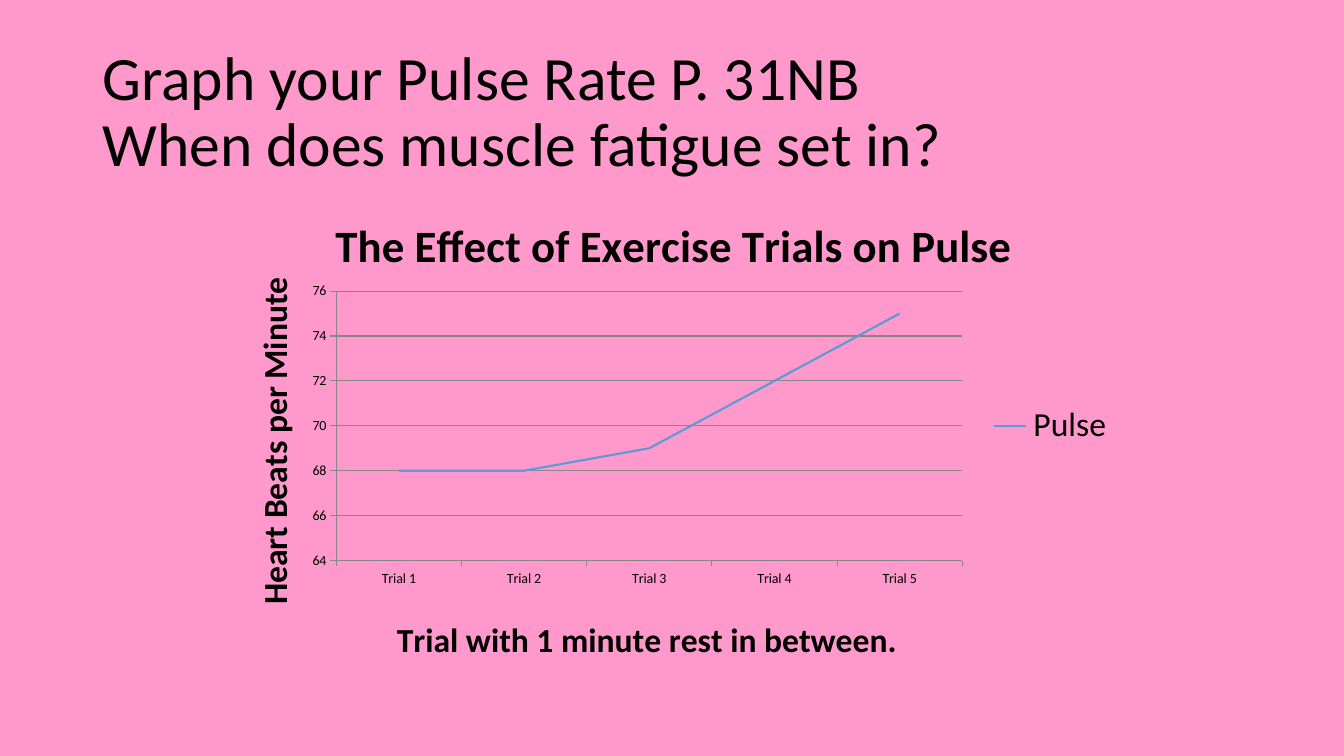
from lxml import etree
from pptx import Presentation
from pptx.chart.data import CategoryChartData as Data
from pptx.dml.color import RGBColor
from pptx.enum.chart import XL_CHART_TYPE as Kind, XL_LEGEND_POSITION as Side
from pptx.enum.chart import XL_MARKER_STYLE as Mark, XL_TICK_MARK as Tick
from pptx.enum.text import MSO_ANCHOR as Anchor, MSO_AUTO_SIZE as Fit, PP_ALIGN as Align
from pptx.oxml.ns import qn
from pptx.util import Pt

PINK = RGBColor(0xFF, 0x99, 0xCC)
BLACK = RGBColor(0, 0, 0)
BLUE = RGBColor(0x5B, 0x9B, 0xD5)
GRAY = RGBColor(0x87, 0x87, 0x87)
FACE = "Calibri"


def style(font, size, bold=False):
    font.name, font.size, font.bold = FACE, Pt(size), bold
    font.color.rgb = BLACK


def place(node, index, **values):
    """Give a chart part a fixed place, in fractions of the chart."""
    for old in node.findall(qn("c:layout")):
        node.remove(old)
    layout = etree.Element(qn("c:layout"))
    manual = etree.SubElement(layout, qn("c:manualLayout"))
    for tag, value in values.items():
        etree.SubElement(manual, qn("c:" + tag)).set("val", str(value))
    node.insert(index, layout)


# Slide and background
deck = Presentation()
deck.slide_width, deck.slide_height = Pt(960), Pt(540)
slide = deck.slides.add_slide(deck.slide_layouts[5])
slide.background.fill.solid()
slide.background.fill.fore_color.rgb = PINK

# Title
title = slide.shapes.title
title.left, title.top, title.width, title.height = Pt(66), Pt(28.75), Pt(828), Pt(104.38)
frame = title.text_frame
frame.text = "Graph your Pulse Rate P. 31NB\vWhen does muscle fatigue set in?"
frame.auto_size = Fit.NONE
frame.vertical_anchor = Anchor.MIDDLE
para = frame.paragraphs[0]
para.alignment = Align.LEFT
para.line_spacing = 0.9
for run in para.runs:
    style(run.font, 44)

# Pulse chart
data = Data()
data.categories = [f"Trial {n}" for n in range(1, 6)]
data.add_series("Pulse", (68, 68, 69, 72, 75))
chart = slide.shapes.add_chart(Kind.LINE, Pt(156), Pt(126), Pt(648), Pt(356.4), data).chart
style(chart.font, 10)
plot = chart.plots[0]
plot.vary_by_categories = False
pulse = plot.series[0]
pulse.smooth = False
pulse.marker.style = Mark.NONE
pulse.format.line.color.rgb = BLUE
pulse.format.line.width = Pt(1.5)

# Axes
trials, beats = chart.category_axis, chart.value_axis
beats.minimum_scale, beats.maximum_scale, beats.major_unit = 64, 76, 2
beats.has_major_gridlines = True
for part in (trials, beats, beats.major_gridlines):
    part.format.line.color.rgb = GRAY
    part.format.line.width = Pt(0.75)
for axis in (trials, beats):
    axis.major_tick_mark, axis.minor_tick_mark = Tick.OUTSIDE, Tick.NONE
    style(axis.tick_labels.font, 10)

# Chart and axis titles
chart.has_title = trials.has_title = beats.has_title = True
for head, text, size, x, y in (
    (chart.chart_title, "The Effect of Exercise Trials on Pulse", 32, 0.12, 0.06),
    (trials.axis_title, "Trial with 1 minute rest in between.", 24, 0.19, 0.87),
    (beats.axis_title, "Heart Beats per Minute", 24, 0.03, 0.19),
):
    head.text_frame.text = text
    style(head.text_frame.paragraphs[0].runs[0].font, size, True)
    place(head._element, 1, xMode="edge", yMode="edge", x=x, y=y)
beats.axis_title.text_frame._txBody.bodyPr.set("rot", "-5400000")

# Legend and plot area
chart.has_legend = True
chart.legend.position = Side.RIGHT
chart.legend.include_in_layout = False
style(chart.legend.font, 24)
place(chart._chartSpace.chart.plotArea, 0, layoutTarget="inner", xMode="edge",
      yMode="edge", x=0.13, y=0.23, w=0.69, h=0.54)

deck.save("out.pptx")
